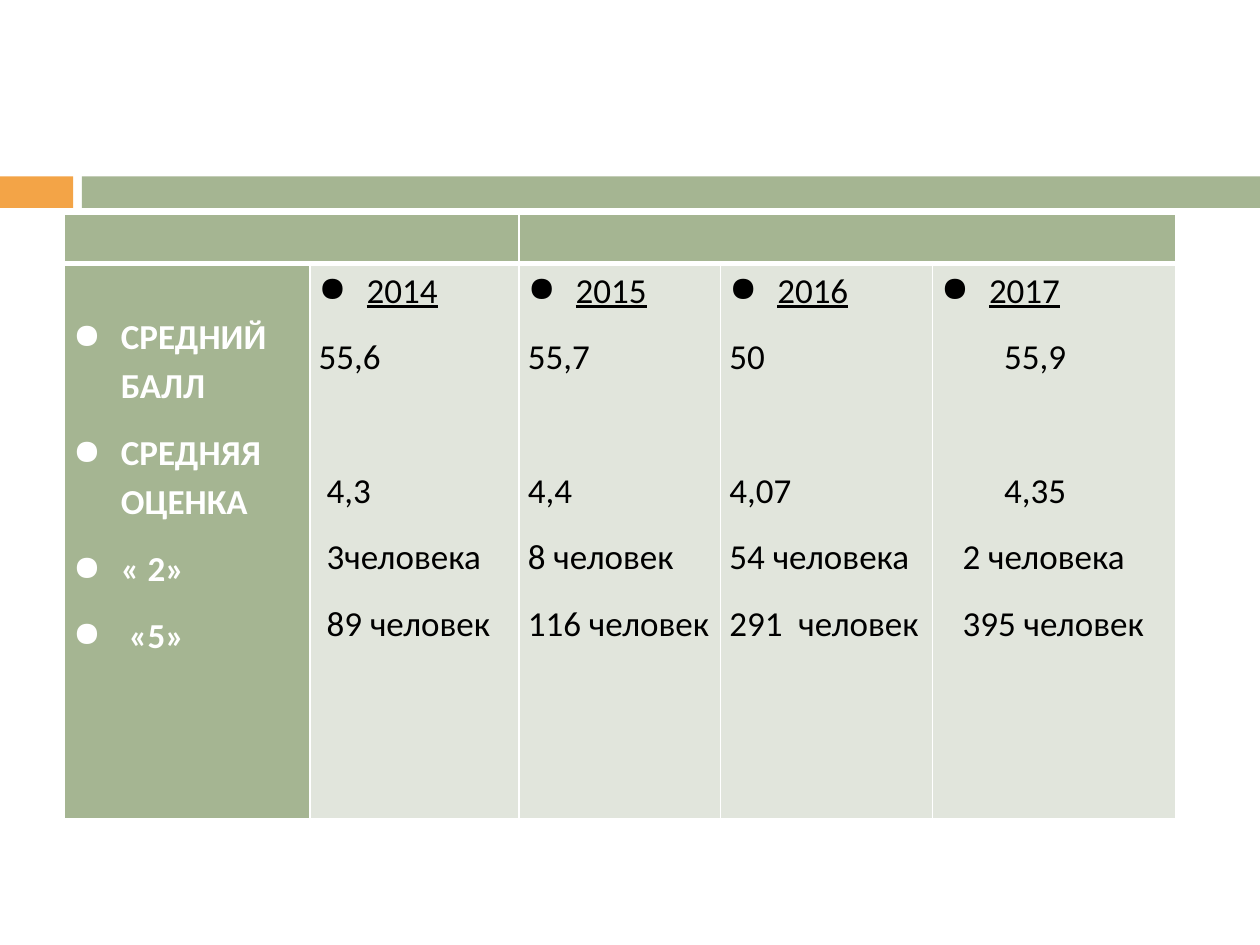
from lxml import etree
from pptx import Presentation
from pptx.dml.color import RGBColor
from pptx.enum.shapes import MSO_SHAPE
from pptx.enum.text import PP_ALIGN
from pptx.oxml.ns import qn
from pptx.util import Inches, Pt

RECT = MSO_SHAPE.RECTANGLE
JUSTIFY = PP_ALIGN.JUSTIFY
ORANGE = RGBColor(0xF3, 0xA4, 0x47)
GREEN = RGBColor(0xA5, 0xB5, 0x92)
PALE = RGBColor(0xE1, 0xE5, 0xDC)
WHITE = RGBColor(0xFF, 0xFF, 0xFF)
BLACK = RGBColor(0, 0, 0)

FONT = "Calibri"
HANG = 0.38
COLS = [1.95, 1.66, 1.6, 1.68, 1.93]
ROWS = [0.39, 4.41]
LABELS = ["СРЕДНИЙ БАЛЛ", "СРЕДНЯЯ ОЦЕНКА", "« 2»", " «5»"]
YEARS = [
    ("2014", ["55,6", " 4,3", " 3человека", " 89 человек"], [0, 0]),
    ("2015", ["55,7", "4,4", "8 человек", "116 человек"], [0, 0]),
    ("2016", ["50", "4,07", "54 человека", "291  человек"], [0, 0]),
    ("2017", ["55,9", "4,35", "2 человека", "395 человек"], [0.5, 0.17]),
]


def add_bar(slide, box, color):
    """Draw a plain filled bar in the given box."""
    sp = slide.shapes.add_shape(RECT, *map(Inches, box))
    sp.shadow.inherit = False
    sp.fill.solid()
    sp.fill.fore_color.rgb = color
    sp.line.fill.background()


def add_band(slide, left, top, width, height):
    """Place the short accent bar and the long bar across the box."""
    accent, start = 0.058 * width, 0.065 * width
    add_bar(slide, (left, top, accent, height), ORANGE)
    add_bar(slide, (left + start, top, width - start, height), GREEN)


def style_cell(cell, color, bottom=1, top_margin=0):
    """Set the margins, fill and white borders of a cell."""
    cell.margin_left = cell.margin_right = Inches(0.07)
    cell.margin_top, cell.margin_bottom = Inches(top_margin), 0
    cell.fill.solid()
    cell.fill.fore_color.rgb = color
    tcPr = cell._tc.get_or_add_tcPr()
    for i, (side, width) in enumerate(zip("LRTB", (1, 1, 1, bottom))):
        ln = etree.Element(qn(f"a:ln{side}"), w=str(Pt(width)))
        fill = etree.SubElement(ln, qn("a:solidFill"))
        etree.SubElement(fill, qn("a:srgbClr"), val=str(WHITE))
        tcPr.insert(i, ln)


def add_line(tf, text, color, bullet=False, indent=0, before=0, bold=False):
    """Write one paragraph, filling the empty first one if there is one."""
    first = tf.paragraphs[0]
    p = tf.add_paragraph() if first.runs else first
    p.alignment = JUSTIFY
    p.line_spacing = 1.15
    p.space_before, p.space_after = Pt(before), Pt(10)
    pPr = p._p.get_or_add_pPr()
    pPr.set("marL", str(Inches(HANG if bullet else indent)))
    pPr.set("indent", str(Inches(-HANG if bullet else 0)))
    if bullet:
        etree.SubElement(pPr, qn("a:buChar"), char="●")
    r = p.add_run()
    r.text = text
    r.font.name, r.font.size = FONT, Pt(20)
    r.font.bold = bold
    r.font.color.rgb = color
    return r


def fill_labels(cell):
    """Write the bulleted row labels."""
    style_cell(cell, GREEN, top_margin=0.37)
    for text in LABELS:
        add_line(cell.text_frame, text, WHITE, bullet=True, bold=True)


def fill_year(cell, year, values, indents):
    """Write an underlined year and its results."""
    style_cell(cell, PALE)
    tf = cell.text_frame
    add_line(tf, year, BLACK, bullet=True).font.underline = True
    for i, text in enumerate(values):
        add_line(tf, text, BLACK, indent=indents[i // 2],
                 before=38 if i == 1 else 0)


def add_results(slide, left, top):
    """Place the table of results by year."""
    box = map(Inches, (left, top, sum(COLS), sum(ROWS)))
    table = slide.shapes.add_table(len(ROWS), len(COLS), *box).table
    table.first_row = table.horz_banding = False
    for col, width in zip(table.columns, COLS):
        col.width = Inches(width)
    for row, height in zip(table.rows, ROWS):
        row.height = Inches(height)
    for c in range(len(COLS)):
        style_cell(table.cell(0, c), GREEN, bottom=3)
    for start, end in ((0, 1), (2, 4)):
        table.cell(0, start).merge(table.cell(0, end))
    fill_labels(table.cell(1, 0))
    for c, (year, values, indents) in enumerate(YEARS, 1):
        fill_year(table.cell(1, c), year, values, indents)


def main():
    """Build and save the slide."""
    prs = Presentation()
    prs.slide_width, prs.slide_height = Inches(10), Inches(7.5)
    slide = prs.slides.add_slide(prs.slide_layouts[6])
    add_band(slide, 0, 1.4, 10, 0.25)
    add_results(slide, 0.51, 1.7)
    prs.save("out.pptx")


if __name__ == "__main__":
    main()
